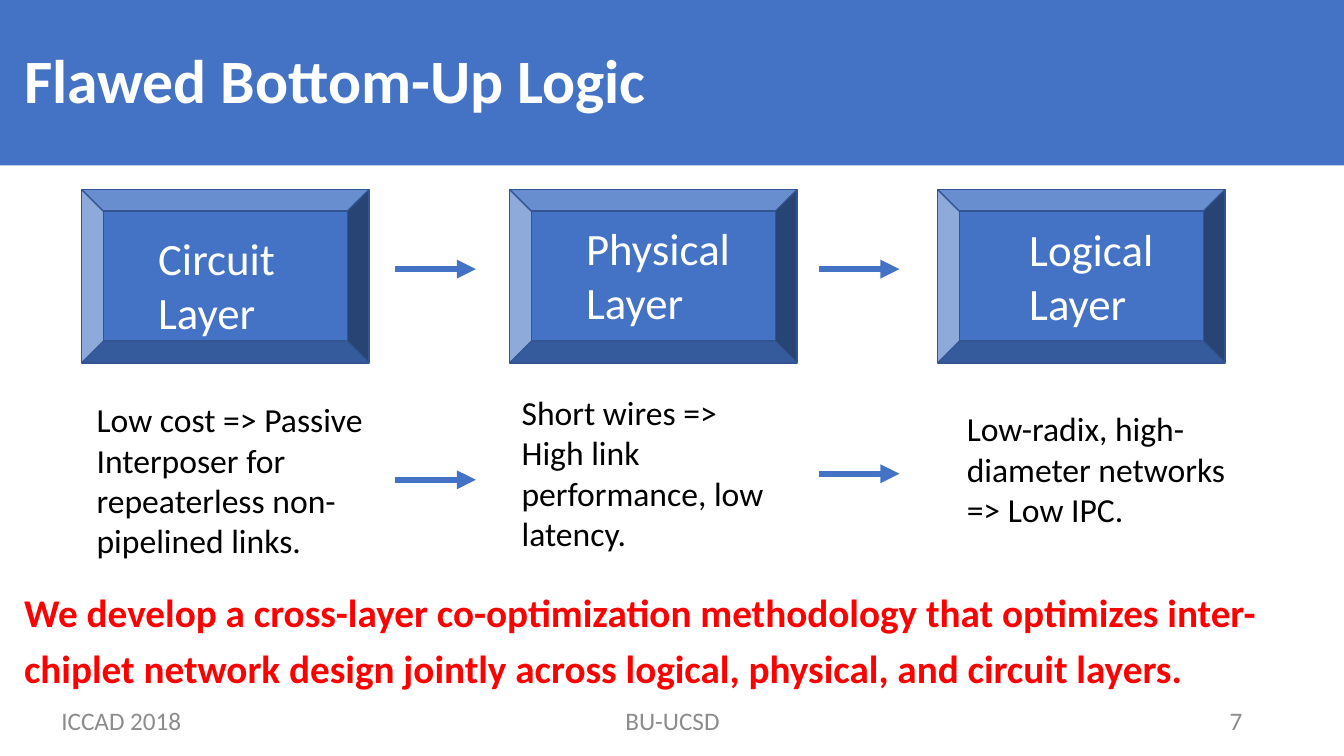
from lxml import etree
from pptx import Presentation
from pptx.dml.color import RGBColor
from pptx.enum.shapes import MSO_CONNECTOR, MSO_SHAPE
from pptx.enum.text import MSO_ANCHOR, PP_ALIGN
from pptx.oxml.ns import qn
from pptx.util import Inches, Pt

STRAIGHT = MSO_CONNECTOR.STRAIGHT
BEVEL, RECTANGLE = MSO_SHAPE.BEVEL, MSO_SHAPE.RECTANGLE
TOP, MIDDLE = MSO_ANCHOR.TOP, MSO_ANCHOR.MIDDLE
LEFT, CENTER, RIGHT = PP_ALIGN.LEFT, PP_ALIGN.CENTER, PP_ALIGN.RIGHT

COLORS = {
    "blue": "4472C4",
    "edge": "325491",
    "white": "FFFFFF",
    "black": "000000",
    "red": "FF0000",
    "gray": "8C8C8C",
}
FONT = "Calibri"
LAYER_WIDTH, LAYER_HEIGHT, LAYER_STEP = 2.85, 1.72, 4.245

# Label and note offsets are measured from the top left of each layer block
LAYERS = [
    {"label": "Circuit Layer", "label_offset": (0.66, 0.36),
     "note": "Low cost => Passive Interposer for repeaterless non-pipelined links.",
     "note_offset": (0.05, 2.03), "note_height": 1.72},
    {"label": "Physical Layer", "label_offset": (0.66, 0.26),
     "note": "Short wires =>\nHigh link performance, low latency.",
     "note_offset": (0.02, 1.96), "note_height": 1.72},
    {"label": "Logical Layer", "label_offset": (0.81, 0.27),
     "note": "Low-radix, high-diameter networks => Low IPC.",
     "note_offset": (0.19, 2.12), "note_height": 1.31},
]
NOTE_ARROW_DROPS = [2.88, 2.82]


def color(name):
    return RGBColor.from_string(COLORS[name])


def add_text(page, box, text, size, ink, bold=False, align=LEFT, anchor=TOP, spacing=None):
    frame = page.shapes.add_textbox(*map(Inches, box)).text_frame
    frame.word_wrap = True
    frame.vertical_anchor = anchor
    for index, line in enumerate(text.split("\n")):
        para = frame.add_paragraph() if index else frame.paragraphs[0]
        para.alignment = align
        if spacing:
            para.line_spacing = spacing
        span = para.add_run()
        span.text = line
        span.font.name = FONT
        span.font.size = Pt(size)
        span.font.bold = bold
        span.font.color.rgb = color(ink)


def add_block(page, preset, box, edge=None):
    block = page.shapes.add_shape(preset, *map(Inches, box))
    block.shadow.inherit = False
    block.fill.solid()
    block.fill.fore_color.rgb = color("blue")
    if edge:
        block.line.color.rgb = color(edge)
        block.line.width = Pt(1)
    else:
        block.line.fill.background()


def add_arrow(page, left, top, length=0.8):
    arrow = page.shapes.add_connector(
        STRAIGHT, Inches(left), Inches(top), Inches(left + length), Inches(top))
    arrow.line.color.rgb = color("blue")
    arrow.line.width = Pt(4.5)
    etree.SubElement(arrow.line._get_or_add_ln(), qn("a:tailEnd"), type="triangle")
    etree.SubElement(arrow._element.spPr, qn("a:effectLst"))


def add_header(page, box):
    left, top, width, height = box
    add_block(page, RECTANGLE, box)
    add_text(page, (left + 0.14, top + 0.05, 12.42, height - 0.04), "Flawed Bottom-Up Logic",
             44, "white", bold=True, anchor=MIDDLE, spacing=0.9)


def add_layer(page, left, top, layer):
    add_block(page, BEVEL, (left, top, LAYER_WIDTH, LAYER_HEIGHT), edge="edge")
    across, down = layer["label_offset"]
    add_text(page, (left + across, top + down, 2.2, 1.18), layer["label"], 32, "white")
    across, down = layer["note_offset"]
    add_text(page, (left + across, top + down, LAYER_WIDTH, layer["note_height"]),
             layer["note"], 24, "black")


def add_flow(page, left, top):
    for index, layer in enumerate(LAYERS):
        add_layer(page, left + index * LAYER_STEP, top, layer)
    # Arrows between neighbouring layers and between their notes
    for index, note_drop in enumerate(NOTE_ARROW_DROPS):
        for drop in (0.79, note_drop):
            add_arrow(page, left + 3.11 + index * 4.2, top + drop)


def add_conclusion(page, box):
    add_text(page, box, "We develop a cross-layer co-optimization methodology that optimizes "
             "inter-chiplet network design jointly across logical, physical, and circuit layers.",
             28, "red", bold=True, spacing=1.2)


def add_footer(page, top):
    for text, left, width, align in [("ICCAD 2018", 0.51, 3.66, LEFT),
                                     ("BU-UCSD", 4.42, 4.5, CENTER),
                                     ("7", 9.42, 3, RIGHT)]:
        add_text(page, (left, top, width, 0.4), text, 18, "gray", align=align, anchor=MIDDLE)


def main():
    deck = Presentation()
    deck.slide_width, deck.slide_height = Inches(13.33), Inches(7.5)
    page = deck.slides.add_slide(deck.slide_layouts[6])
    add_header(page, (0, -0.05, 13.33, 1.69))
    add_flow(page, 0.81, 1.88)
    add_conclusion(page, (0.14, 5.69, 12.45, 1.19))
    add_footer(page, 6.95)
    deck.save("out.pptx")


if __name__ == "__main__":
    main()
